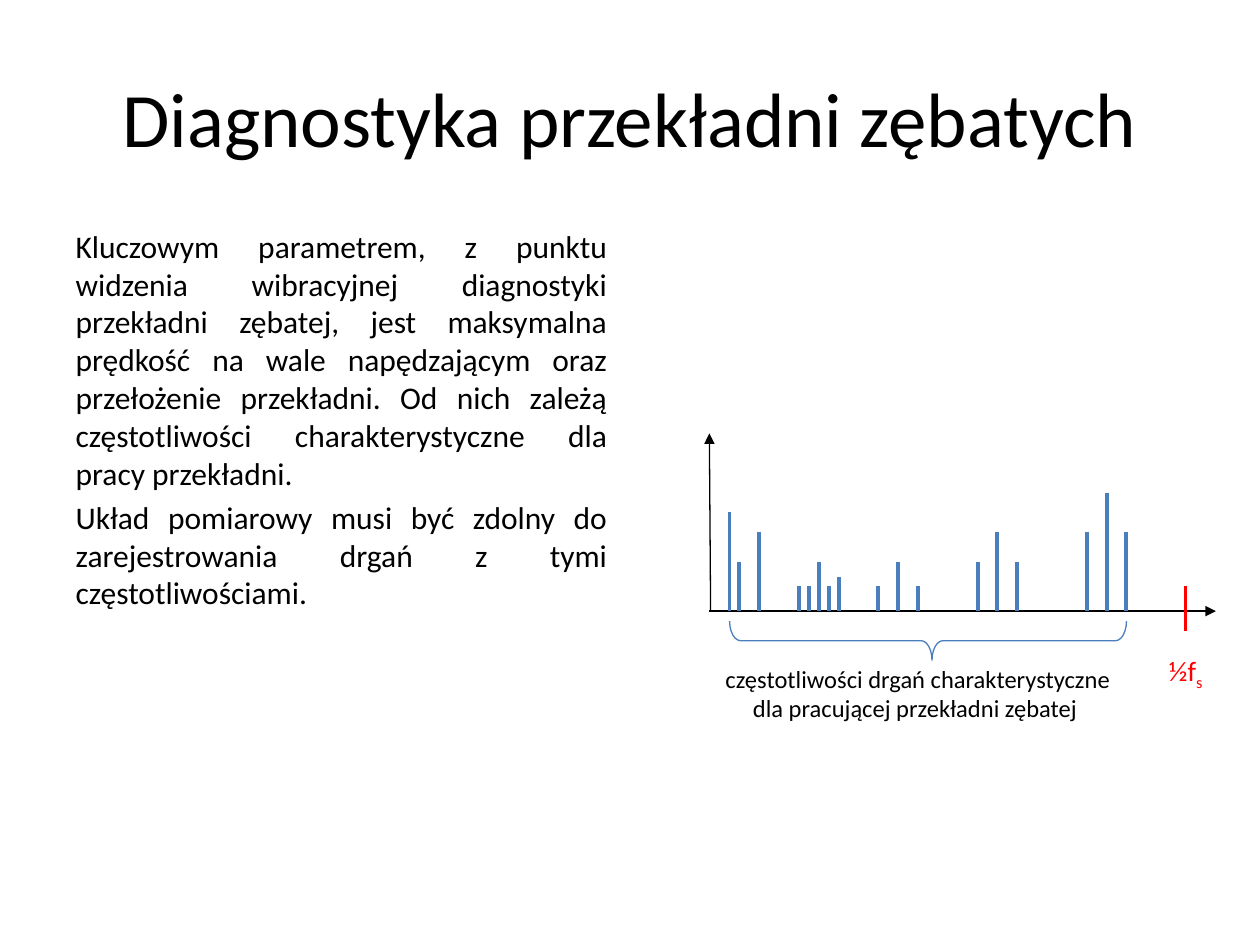
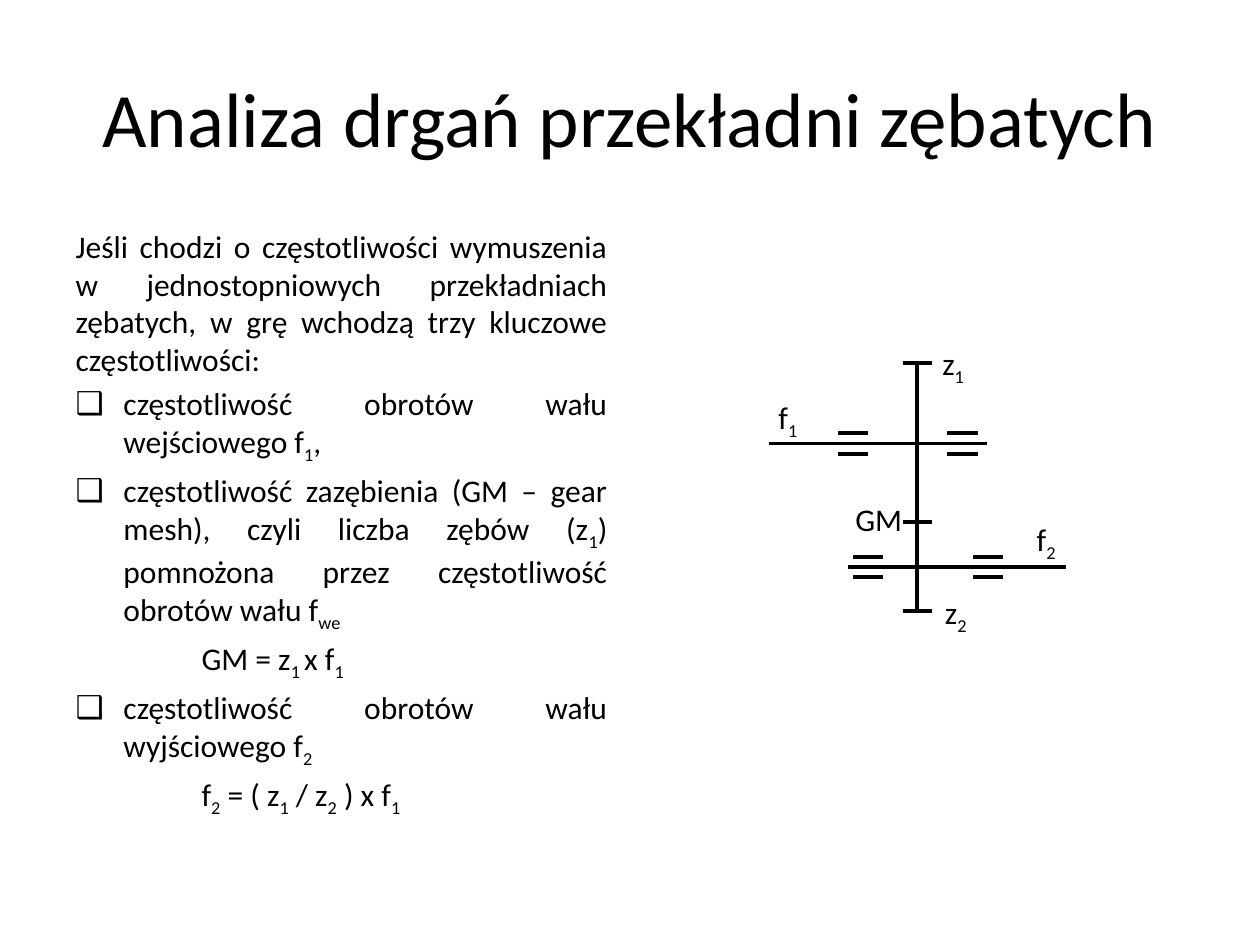
from dataclasses import dataclass

import lxml.etree
import pptx
import pptx.dml.color
import pptx.enum.shapes
import pptx.enum.text
import pptx.oxml.ns
import pptx.presentation
import pptx.shapes.base
import pptx.slide
import pptx.text.text
import pptx.util
from pptx.util import Inches

FONT = "Calibri"
COLORS = {"ink": "000000", "spectrum": "4B7EBC", "limit": "FF0000"}
ALIGN = pptx.enum.text.PP_ALIGN
AUTO_SIZE = pptx.enum.text.MSO_AUTO_SIZE


@dataclass(frozen=True)
class Stroke:
    start: tuple[float, float]
    end: tuple[float, float]
    color: str = "ink"
    width: float = 2.25
    arrow: bool = False


@dataclass(frozen=True)
class Label:
    lines: tuple[str, ...]
    left: float
    top: float
    width: float
    height: float = 0.4
    size: int = 18
    color: str = "ink"
    align: ALIGN = ALIGN.JUSTIFY


@dataclass(frozen=True)
class BodyItem:
    text: str
    margin: float = 0
    bullet: str = ""


# Shared helpers

def rgb(name: str) -> pptx.dml.color.RGBColor:
    return pptx.dml.color.RGBColor.from_string(COLORS[name])


def add_xml(parent, tag: str, **attributes: str):
    element = lxml.etree.SubElement(parent, pptx.oxml.ns.qn(tag))
    for name, value in attributes.items():
        element.set(name, value)
    return element


def write(paragraph: pptx.text.text._Paragraph, text: str, size: int,
          color: str, align: ALIGN) -> None:
    """Fill a paragraph; parts between underscores become subscripts."""
    paragraph.alignment = align
    for index, part in enumerate(text.split("_")):
        if not part:
            continue
        run = paragraph.add_run()
        run.text = part
        if index % 2:
            run._r.get_or_add_rPr().set("baseline", "-25000")
    for font in (paragraph.font, *(run.font for run in paragraph.runs)):
        font.name = FONT
        font.size = pptx.util.Pt(size)
        font.color.rgb = rgb(color)


def paragraphs_for(frame: pptx.text.text.TextFrame, count: int) -> list:
    return [frame.paragraphs[0]] + [frame.add_paragraph() for _ in range(count - 1)]


def place(shape: pptx.shapes.base.BaseShape, left: float, top: float,
          width: float, height: float) -> None:
    shape.left, shape.top = Inches(left), Inches(top)
    shape.width, shape.height = Inches(width), Inches(height)


def add_stroke(slide: pptx.slide.Slide, stroke: Stroke) -> None:
    connector = slide.shapes.add_connector(
        pptx.enum.shapes.MSO_CONNECTOR.STRAIGHT,
        *(Inches(value) for value in (*stroke.start, *stroke.end)))
    connector.line.color.rgb = rgb(stroke.color)
    connector.line.width = pptx.util.Pt(stroke.width)
    if stroke.arrow:
        add_xml(connector.line._get_or_add_ln(), "a:tailEnd", type="triangle")
    add_xml(connector._element.spPr, "a:effectLst")


def add_label(slide: pptx.slide.Slide, label: Label) -> None:
    box = slide.shapes.add_textbox(Inches(label.left), Inches(label.top),
                                   Inches(label.width), Inches(label.height))
    frame = box.text_frame
    frame.word_wrap = False
    frame.auto_size = AUTO_SIZE.SHAPE_TO_FIT_TEXT
    for paragraph, line in zip(paragraphs_for(frame, len(label.lines)), label.lines):
        write(paragraph, line, label.size, label.color, label.align)


def add_content_slide(presentation: pptx.presentation.Presentation, title: str,
                      items: list[BodyItem]) -> pptx.slide.Slide:
    slide = presentation.slides.add_slide(presentation.slide_layouts[1])
    heading, body = slide.shapes.title, slide.placeholders[1]
    place(heading, 0.5, 0.3, 9, 1.25)
    write(heading.text_frame.paragraphs[0], title, 44, "ink", ALIGN.CENTER)

    place(body, 0.5, 1.75, 4.42, 4.95)
    body.text_frame.auto_size = AUTO_SIZE.NONE
    for paragraph, item in zip(paragraphs_for(body.text_frame, len(items)), items):
        properties = paragraph._p.get_or_add_pPr()
        properties.set("marL", str(Inches(item.margin)))
        properties.set("indent", str(Inches(-item.margin if item.bullet else 0)))
        if item.bullet:
            add_xml(properties, "a:buChar", char=item.bullet)
        else:
            add_xml(properties, "a:buNone")
        write(paragraph, item.text, 18, "ink", ALIGN.JUSTIFY)
    return slide


# Slide 1: vibration spectrum of a gearbox

def build_diagnostics(presentation: pptx.presentation.Presentation) -> None:
    slide = add_content_slide(presentation, "Diagnostyka przekładni zębatych", [
        BodyItem("Kluczowym parametrem, z punktu widzenia wibracyjnej diagnostyki "
                 "przekładni zębatej, jest maksymalna prędkość na wale napędzającym "
                 "oraz przełożenie przekładni. Od nich zależą częstotliwości "
                 "charakterystyczne dla pracy przekładni."),
        BodyItem("Układ pomiarowy musi być zdolny do zarejestrowania drgań "
                 "z tymi częstotliwościami."),
    ])
    baseline = 4.85
    add_stroke(slide, Stroke((5.63, baseline), (9.65, baseline), width=0.75, arrow=True))
    add_stroke(slide, Stroke((5.64, baseline), (5.63, 3.44), width=0.75, arrow=True))

    # Spectral lines: position in grid steps -> height of the line's top
    first_line, span, steps = 5.79, 3.15, 40
    line_tops = {0: 4.06, 1: 4.46, 3: 4.22,
                 7: 4.65, 8: 4.65, 9: 4.46, 10: 4.65, 11: 4.58,
                 15: 4.65, 17: 4.46, 19: 4.65,
                 25: 4.46, 27: 4.22, 29: 4.46,
                 36: 4.22, 38: 3.91, 40: 4.22}
    for step, top in line_tops.items():
        x = first_line + step * span / steps
        add_stroke(slide, Stroke((x, top), (x, baseline), "spectrum"))

    # Brace under the spectrum and the sampling limit
    brace = slide.shapes.add_shape(pptx.enum.shapes.MSO_SHAPE.RIGHT_BRACE,
                                   Inches(7.21), Inches(3.51), Inches(0.31), Inches(span))
    brace.rotation = 90
    brace.adjustments[0], brace.adjustments[1] = 0.28, 0.49
    brace.shadow.inherit = False
    brace.fill.background()
    brace.line.color.rgb = rgb("spectrum")
    brace.line.width = pptx.util.Pt(0.75)
    add_stroke(slide, Stroke((9.41, 4.65), (9.41, 5.01), "limit", 1.5))

    add_label(slide, Label(("częstotliwości drgań charakterystyczne",
                            "dla pracującej przekładni zębatej "),
                           5.63, 5.22, 3.31, 0.57, 14, align=ALIGN.CENTER))
    add_label(slide, Label(("½f_s_",), 9.17, 5.14, 0.48, 0.37, 16, "limit", ALIGN.CENTER))


# Slide 2: scheme of a single-stage gearbox

def build_analysis(presentation: pptx.presentation.Presentation) -> None:
    bullet = {"margin": 0.38, "bullet": "❑"}
    slide = add_content_slide(presentation, "Analiza drgań przekładni zębatych", [
        BodyItem("Jeśli chodzi o częstotliwości wymuszenia w jednostopniowych "
                 "przekładniach zębatych, w grę wchodzą trzy kluczowe częstotliwości:"),
        BodyItem("częstotliwość obrotów wału wejściowego f_1_,", **bullet),
        BodyItem("częstotliwość zazębienia (GM – gear mesh), czyli liczba zębów (z_1_) "
                 "pomnożona przez częstotliwość obrotów wału f_we_", **bullet),
        BodyItem("GM = z_1 _x f_1_", margin=1),
        BodyItem("częstotliwość obrotów wału wyjściowego f_2_", **bullet),
        BodyItem("f_2_ = ( z_1_ / z_2_ ) x f_1_", margin=1),
    ])
    # Two meshing wheels, seen from the side
    wheel_x, wheel_edges = 7.28, (2.88, 4.14, 4.85)
    for top, bottom in zip(wheel_edges, wheel_edges[1:]):
        add_stroke(slide, Stroke((wheel_x, top), (wheel_x, bottom)))
    for y in wheel_edges:
        add_stroke(slide, Stroke((7.17, y), (7.4, y)))

    # Shafts (left, right, height, bearing positions), each bearing a pair of lines
    shafts = ((6.1, 7.83, 3.52, (6.65, 7.52)), (6.73, 8.46, 4.5, (6.77, 7.72)))
    for left, right, y, bearings in shafts:
        add_stroke(slide, Stroke((left, y), (right, y)))
        for bearing in bearings:
            for bearing_y in (y - 0.08, y + 0.08):
                add_stroke(slide, Stroke((bearing, bearing_y), (bearing + 0.24, bearing_y)))

    for text, left, top, width in (("f_1_", 6.08, 3.11, 0.36), ("f_2_", 8.13, 4.08, 0.36),
                                   ("z_1_", 7.38, 2.68, 0.39), ("z_2_", 7.4, 4.66, 0.39),
                                   ("GM", 6.69, 3.92, 0.58)):
        add_label(slide, Label((text,), left, top, width))


def main() -> None:
    presentation = pptx.Presentation()
    presentation.slide_width, presentation.slide_height = Inches(10), Inches(7.5)
    build_diagnostics(presentation)
    build_analysis(presentation)
    presentation.save("out.pptx")


if __name__ == "__main__":
    main()
